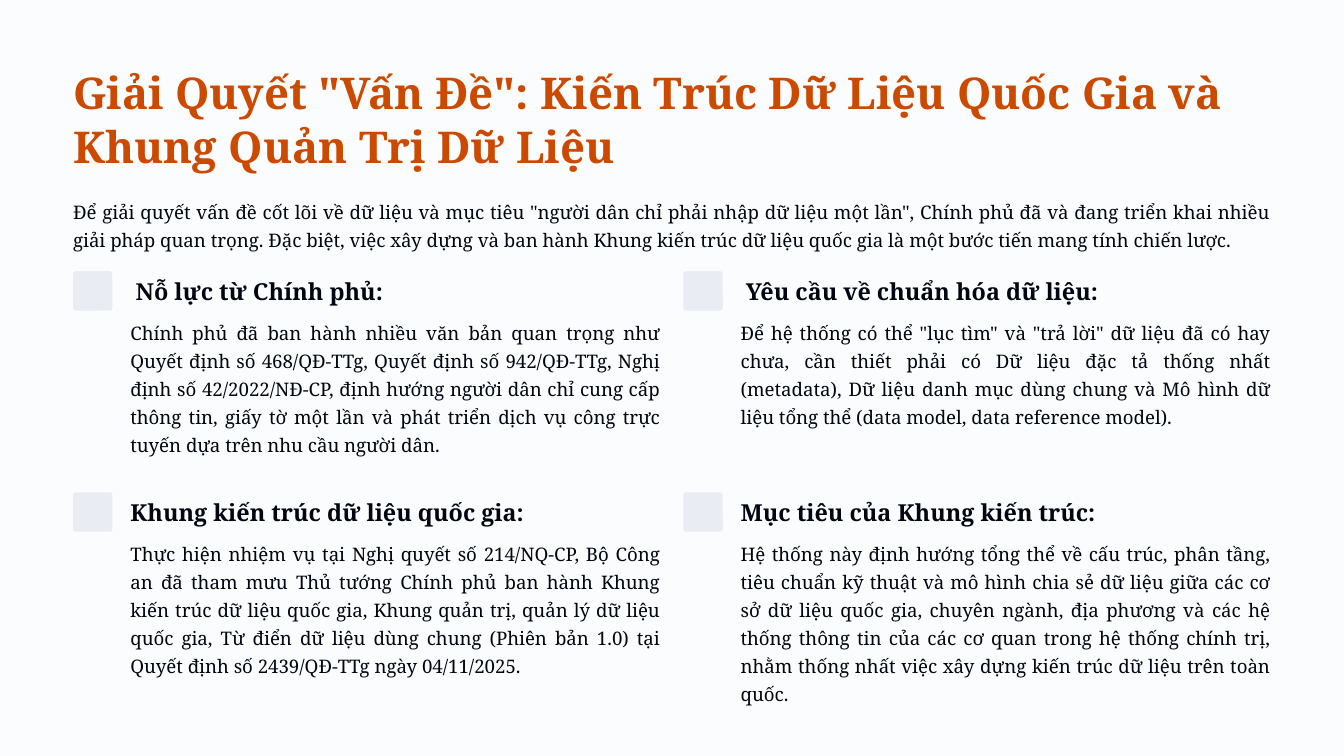
from pptx import Presentation
from pptx.dml.color import RGBColor
from pptx.enum.shapes import MSO_SHAPE
from pptx.enum.text import MSO_ANCHOR, MSO_AUTO_SIZE, PP_ALIGN
from pptx.util import Pt

ROUNDED = MSO_SHAPE.ROUNDED_RECTANGLE
TOP = MSO_ANCHOR.TOP
NO_AUTOFIT = MSO_AUTO_SIZE.NONE
LEFT = PP_ALIGN.LEFT
JUSTIFY = PP_ALIGN.JUSTIFY

INK = "010511"
MARGIN = 62.64
FULL_WIDTH = 1026.72
MARKER_SIZE = 33.8
FIRST_ROW = 232.5
ROW_PITCH = 189.5
COLUMN_PITCH = 523.1
TEXT_INDENT = 49.1


def color(value):
    return RGBColor.from_string(value)


def write(box, place, text, size, spacing, bold=False, ink=INK, align=JUSTIFY, wrap=True):
    box.left, box.top, box.width, box.height = [Pt(length) for length in place]
    frame = box.text_frame
    frame.margin_left = frame.margin_right = frame.margin_top = frame.margin_bottom = 0
    frame.vertical_anchor = TOP
    frame.auto_size = NO_AUTOFIT
    frame.word_wrap = wrap
    frame.text = text
    para = frame.paragraphs[0]
    para.alignment = align
    para.line_spacing = Pt(spacing)
    para.space_before = Pt(0)
    font = para.runs[0].font
    font.name = "Noto Serif"
    font.size = Pt(size)
    font.bold = bold
    font.color.rgb = color(ink)


deck = Presentation()
deck.slide_width = Pt(1152)
deck.slide_height = Pt(648)
page = deck.slides.add_slide(deck.slide_layouts[5])
page.background.fill.solid()
page.background.fill.fore_color.rgb = color("FBFCFE")

write(page.shapes.title, (MARGIN, 54, FULL_WIDTH, 95),
      'Giải Quyết "Vấn Đề": Kiến Trúc Dữ Liệu Quốc Gia và Khung Quản Trị Dữ Liệu',
      37.5, 47, bold=True, ink="CC4900", align=LEFT)

intro = page.shapes.add_textbox(0, 0, 0, 0)
write(intro, (MARGIN, 167, FULL_WIDTH, 48),
      'Để giải quyết vấn đề cốt lõi về dữ liệu và mục tiêu "người dân chỉ phải nhập dữ liệu '
      'một lần", Chính phủ đã và đang triển khai nhiều giải pháp quan trọng. Đặc biệt, việc xây '
      'dựng và ban hành Khung kiến trúc dữ liệu quốc gia là một bước tiến mang tính chiến lược.',
      16, 24)

topics = [
    ("Nỗ lực từ Chính phủ:", 4.5, 190, 121.7,
     "Chính phủ đã ban hành nhiều văn bản quan trọng như Quyết định số 468/QĐ-TTg, Quyết định "
     "số 942/QĐ-TTg, Nghị định số 42/2022/NĐ-CP, định hướng người dân chỉ cung cấp thông tin, "
     "giấy tờ một lần và phát triển dịch vụ công trực tuyến dựa trên nhu cầu người dân."),
    ("Yêu cầu về chuẩn hóa dữ liệu:", 4.5, 265.7, 97.2,
     'Để hệ thống có thể "lục tìm" và "trả lời" dữ liệu đã có hay chưa, cần thiết phải có '
     "Dữ liệu đặc tả thống nhất (metadata), Dữ liệu danh mục dùng chung và Mô hình dữ liệu "
     "tổng thể (data model, data reference model)."),
    ("Khung kiến trúc dữ liệu quốc gia:", 0, 296, 121.7,
     "Thực hiện nhiệm vụ tại Nghị quyết số 214/NQ-CP, Bộ Công an đã tham mưu Thủ tướng Chính "
     "phủ ban hành Khung kiến trúc dữ liệu quốc gia, Khung quản trị, quản lý dữ liệu quốc gia, "
     "Từ điển dữ liệu dùng chung (Phiên bản 1.0) tại Quyết định số 2439/QĐ-TTg ngày 04/11/2025."),
    ("Mục tiêu của Khung kiến trúc:", 0, 270, 121.7,
     "Hệ thống này định hướng tổng thể về cấu trúc, phân tầng, tiêu chuẩn kỹ thuật và mô hình "
     "chia sẻ dữ liệu giữa các cơ sở dữ liệu quốc gia, chuyên ngành, địa phương và các hệ thống "
     "thông tin của các cơ quan trong hệ thống chính trị, nhằm thống nhất việc xây dựng kiến "
     "trúc dữ liệu trên toàn quốc."),
]

for index, (heading, shift, heading_width, body_height, body) in enumerate(topics):
    row, column = divmod(index, 2)
    left = MARGIN + column * COLUMN_PITCH
    top = FIRST_ROW + row * ROW_PITCH
    text_left = left + TEXT_INDENT

    marker = page.shapes.add_shape(ROUNDED, Pt(left), Pt(top), Pt(MARKER_SIZE), Pt(MARKER_SIZE))
    marker.adjustments[0] = 0.07
    marker.shadow.inherit = False
    marker.fill.solid()
    marker.fill.fore_color.rgb = color("E9ECF2")
    marker.line.fill.background()

    heading_box = page.shapes.add_textbox(0, 0, 0, 0)
    write(heading_box, (text_left + shift, top + 5.4, heading_width, 23.8),
          heading, 20, 23.5, bold=True, wrap=False)

    body_box = page.shapes.add_textbox(0, 0, 0, 0)
    write(body_box, (text_left, top + 38.2, 454.3, body_height), body, 16, 24)

deck.save("out.pptx")
